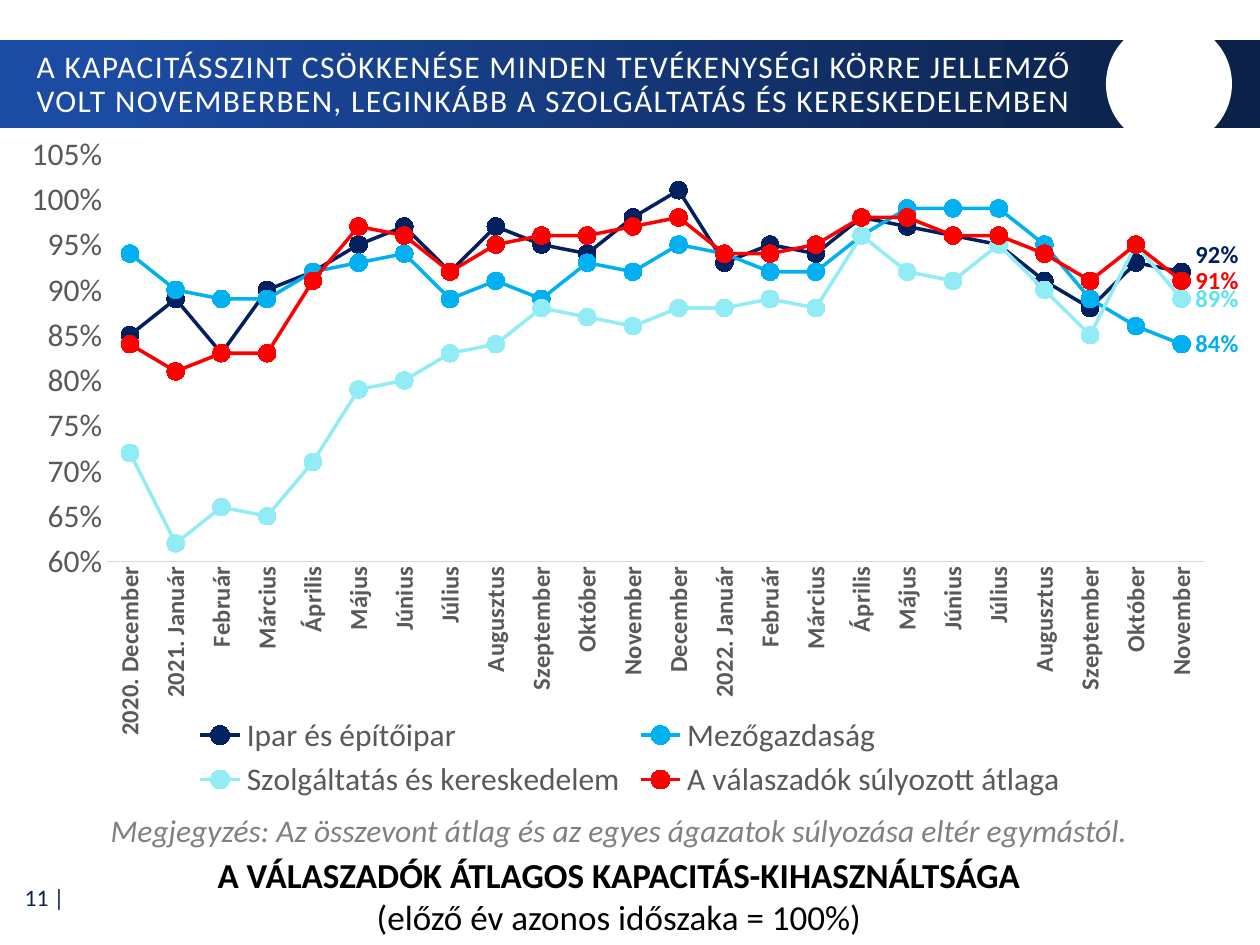
from dataclasses import dataclass

from lxml import etree
from pptx import Presentation
from pptx.chart.data import CategoryChartData
from pptx.dml.color import RGBColor
from pptx.enum.chart import (XL_CHART_TYPE, XL_LABEL_POSITION, XL_LEGEND_POSITION,
                             XL_MARKER_STYLE, XL_TICK_MARK)
from pptx.enum.shapes import MSO_SHAPE
from pptx.enum.text import MSO_ANCHOR, MSO_AUTO_SIZE, PP_ALIGN
from pptx.oxml.ns import qn
from pptx.util import Emu, Pt

LINE_MARKERS = XL_CHART_TYPE.LINE_MARKERS
CIRCLE = XL_MARKER_STYLE.CIRCLE
NO_TICK = XL_TICK_MARK.NONE
LABEL_RIGHT = XL_LABEL_POSITION.RIGHT
LEGEND_BOTTOM = XL_LEGEND_POSITION.BOTTOM
RECT, OVAL = MSO_SHAPE.RECTANGLE, MSO_SHAPE.OVAL
TOP, MIDDLE = MSO_ANCHOR.TOP, MSO_ANCHOR.MIDDLE
NO_AUTOFIT = MSO_AUTO_SIZE.NONE
LEFT, CENTER, RIGHT = PP_ALIGN.LEFT, PP_ALIGN.CENTER, PP_ALIGN.RIGHT

EMU_PER_PX = 914400 / 126


@dataclass(frozen=True)
class Theme:
    font: str = "Calibri"
    white: str = "FFFFFF"
    black: str = "000000"
    band_start: str = "1B4BA3"
    band_end: str = "0C2148"
    note: str = "808080"
    axis_text: str = "595959"
    axis_line: str = "D9D9D9"
    industry: str = "002060"
    farming: str = "00B0F0"
    services: str = "92ECF6"
    services_label: str = "5CE3F1"
    average: str = "FF0000"
    page_size: float = 13.5
    small_size: float = 14
    body_size: float = 18
    caption_size: float = 20


MONTHS = ["Január", "Február", "Március", "Április", "Május", "Június", "Július",
          "Augusztus", "Szeptember", "Október", "November", "December"]
PERIODS = ["2020. December", "2021. Január", *MONTHS[1:], "2022. Január", *MONTHS[1:11]]

# Whole percentages, one per period
INDUSTRY = [85, 89, 83, 90, 92, 95, 97, 92, 97, 95, 94, 98,
            101, 93, 95, 94, 98, 97, 96, 95, 91, 88, 93, 92]
FARMING = [94, 90, 89, 89, 92, 93, 94, 89, 91, 89, 93, 92,
           95, 94, 92, 92, 96, 99, 99, 99, 95, 89, 86, 84]
SERVICES = [72, 62, 66, 65, 71, 79, 80, 83, 84, 88, 87, 86,
            88, 88, 89, 88, 96, 92, 91, 95, 90, 85, 95, 89]
AVERAGE = [84, 81, 83, 83, 91, 97, 96, 92, 95, 96, 96, 97,
           98, 94, 94, 95, 98, 98, 96, 96, 94, 91, 95, 91]


def px(*lengths):
    return [Emu(round(length * EMU_PER_PX)) for length in lengths]


def manual_layout(**settings):
    layout = etree.Element(qn("c:layout"))
    manual = etree.SubElement(layout, qn("c:manualLayout"))
    for tag, value in settings.items():
        etree.SubElement(manual, qn(f"c:{tag}")).set("val", str(value))
    return layout


class SlideBuilder:
    def __init__(self, slide, theme):
        self.slide, self.theme = slide, theme

    def style(self, font, size, color, bold=False, italic=False):
        font.name, font.size = self.theme.font, Pt(size)
        font.bold, font.italic = bold, italic
        font.color.rgb = RGBColor.from_string(color)

    def shape(self, kind, box, color, end_color=None):
        shape = self.slide.shapes.add_shape(kind, *px(*box))
        shape.shadow.inherit = False
        shape.line.fill.background()
        if end_color is None:
            shape.fill.solid()
            shape.fill.fore_color.rgb = RGBColor.from_string(color)
            return
        shape.fill.gradient()
        shape.fill.gradient_angle = 0
        stops = zip(shape.fill.gradient_stops, (0.09, 0.95), (color, end_color))
        for stop, position, stop_color in stops:
            stop.position = position
            stop.color.rgb = RGBColor.from_string(stop_color)

    def title(self, text, box):
        title = self.slide.shapes.title
        tree = title._element.getparent()
        tree.append(title._element)  # in front of the band
        title.left, title.top, title.width, title.height = px(*box)
        frame = title.text_frame
        frame.text = text
        frame.word_wrap, frame.auto_size = True, NO_AUTOFIT
        frame.vertical_anchor = MIDDLE
        paragraph = frame.paragraphs[0]
        paragraph.alignment, paragraph.line_spacing = LEFT, 0.9
        run = paragraph.runs[0]
        self.style(run.font, self.theme.body_size, self.theme.white)
        run._r.get_or_add_rPr().set("spc", "80")

    def text(self, lines, box, size, color, align=CENTER, anchor=TOP,
             bold_first=False, italic=False):
        frame = self.slide.shapes.add_textbox(*px(*box)).text_frame
        frame.word_wrap, frame.vertical_anchor = True, anchor
        frame.text = "\n".join(lines)
        for index, paragraph in enumerate(frame.paragraphs):
            paragraph.alignment = align
            self.style(paragraph.runs[0].font, size, color,
                       bold_first and index == 0, italic)

    def line_chart(self, periods, series, box):
        """Each series is (name, percentages, color, label color, label shift)."""
        theme = self.theme
        data = CategoryChartData(number_format="0%")
        data.categories = periods
        for name, percentages, *_ in series:
            data.add_series(name, [value / 100 for value in percentages])
        chart = self.slide.shapes.add_chart(LINE_MARKERS, *px(*box), data).chart
        chart.has_title = False
        self.style(chart.font, theme.body_size, theme.black)
        chart.has_legend = True
        chart.legend.position = LEGEND_BOTTOM
        chart.legend.include_in_layout = False
        self.style(chart.legend.font, theme.body_size, theme.axis_text)

        # Plot area
        area = chart._chartSpace.chart.plotArea
        for layout in area.findall(qn("c:layout")):
            area.remove(layout)
        area.insert(0, manual_layout(layoutTarget="inner", xMode="edge", yMode="edge",
                                     x=0.085, y=0.04, w=0.871, h=0.601))

        # Axes
        months, percent = chart.category_axis, chart.value_axis
        for axis in (months, percent):
            axis.major_tick_mark = axis.minor_tick_mark = NO_TICK
            axis.has_major_gridlines = False
        self.style(months.tick_labels.font, theme.small_size, theme.axis_text, bold=True)
        months._element.find(qn("c:txPr")).find(qn("a:bodyPr")).set("rot", "-5400000")
        months.format.line.color.rgb = RGBColor.from_string(theme.axis_line)
        months.format.line.width = Pt(0.75)
        self.style(percent.tick_labels.font, theme.body_size, theme.axis_text)
        percent.tick_labels.number_format = "0%"
        percent.tick_labels.number_format_is_linked = False
        percent.minimum_scale, percent.maximum_scale = 0.6, 1.05
        percent.major_unit = 0.05
        percent.format.line.fill.background()

        # Lines, markers and the label of the last point
        for line, (_, _, color, label_color, shift) in zip(chart.plots[0].series, series):
            rgb = RGBColor.from_string(color)
            line.smooth = False
            line.format.line.color.rgb, line.format.line.width = rgb, Pt(2)
            line.marker.style, line.marker.size = CIRCLE, 10
            line.marker.format.fill.solid()
            line.marker.format.fill.fore_color.rgb = rgb
            line.marker.format.line.color.rgb = rgb
            label = line.points[len(periods) - 1].data_label
            self.style(label.font, theme.small_size, label_color, bold=True)
            label.position = LABEL_RIGHT
            if shift:
                index = line._element.find(".//" + qn("c:dLbl")).find(qn("c:idx"))
                index.addnext(manual_layout(x=0, y=shift))


def main():
    theme = Theme()
    deck = Presentation()
    deck.slide_width, deck.slide_height = px(1260, 945)
    page = SlideBuilder(deck.slides.add_slide(deck.slide_layouts[5]), theme)

    # Page number and header band
    page.text(["11 |"], (1, 874, 76, 47), theme.page_size, theme.band_end, RIGHT, MIDDLE)
    page.shape(RECT, (0, 40, 1260, 88), theme.band_start, theme.band_end)
    page.shape(OVAL, (1106, 21, 126, 126), theme.white)
    page.title("A KAPACITÁSSZINT CSÖKKENÉSE MINDEN TEVÉKENYSÉGI KÖRRE JELLEMZŐ VOLT "
               "NOVEMBERBEN, LEGINKÁBB A SZOLGÁLTATÁS ÉS KERESKEDELEMBEN",
               (24, 43, 1118, 84))

    # Caption and note
    page.text(["A VÁLASZADÓK ÁTLAGOS KAPACITÁS-KIHASZNÁLTSÁGA",
               "(előző év azonos időszaka = 100%)"],
              (111, 847, 1016, 97), theme.caption_size, theme.black, bold_first=True)
    page.text(["Megjegyzés: Az összevont átlag és az egyes ágazatok súlyozása "
               "eltér egymástól."],
              (44, 805, 1150, 50), theme.body_size, theme.note, italic=True)

    # Capacity chart
    page.line_chart(PERIODS, [
        ("Ipar és építőipar", INDUSTRY, theme.industry, theme.industry, -0.025),
        ("Mezőgazdaság", FARMING, theme.farming, theme.farming, 0),
        ("Szolgáltatás és kereskedelem", SERVICES, theme.services,
         theme.services_label, 0),
        ("A válaszadók súlyozott átlaga", AVERAGE, theme.average, theme.average, 0),
    ], (0, 127, 1260, 678))

    deck.save("out.pptx")


if __name__ == "__main__":
    main()
